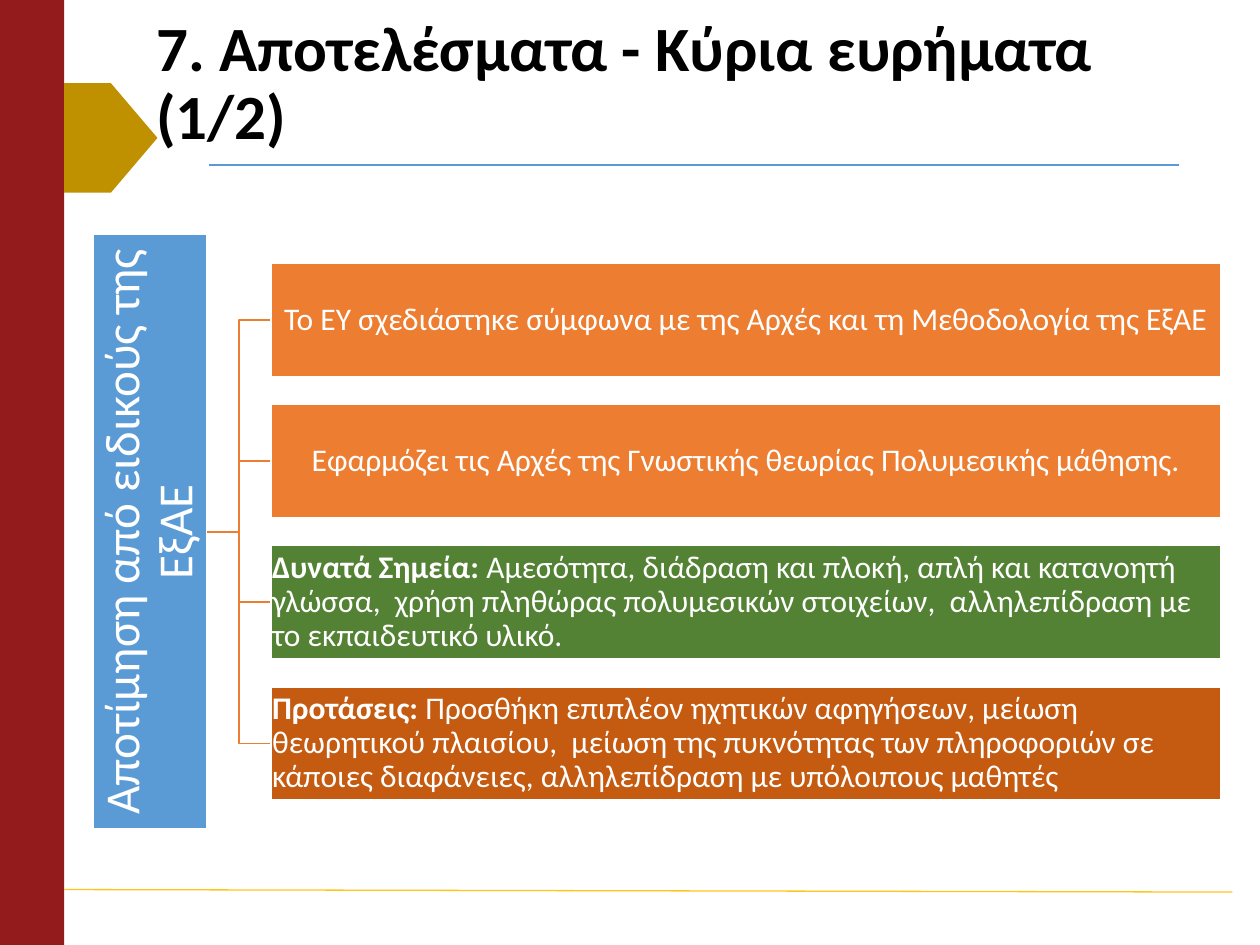
from dataclasses import dataclass

from lxml.etree import SubElement
from pptx import Presentation
from pptx.dml.color import RGBColor as Rgb
from pptx.enum.shapes import MSO_CONNECTOR as Connector, MSO_SHAPE as Preset
from pptx.enum.text import MSO_ANCHOR as Anchor, MSO_AUTO_SIZE as AutoSize, PP_ALIGN as Align
from pptx.oxml.ns import qn
from pptx.util import Inches, Pt


@dataclass(frozen=True)
class Theme:
    """Colours, font and type sizes of the slide."""
    font: str = "Calibri"
    title_size: int = 36
    root_size: int = 28
    branch_size: int = 18
    black: str = "000000"
    white: str = "FFFFFF"
    blue: str = "5B9BD5"
    orange: str = "ED7D31"
    green: str = "548235"
    rust: str = "C55A11"
    red: str = "931B1B"
    ochre: str = "BF9000"
    yellow: str = "FFC61A"


@dataclass(frozen=True)
class Grid:
    """Columns and rows of the tree, in inches."""
    root_left: float = 0.74
    branch_left: float = 2.15
    branch_width: float = 7.54
    first_top: float = 2.09
    box_height: float = 0.9
    row_pitch: float = 1.12
    root_length: float = 4.72

    def row_top(self, row):
        """Return the top of a branch row."""
        return self.first_top + row * self.row_pitch

    def row_middle(self, row):
        """Return the vertical middle of a branch row."""
        return self.row_top(row) + self.box_height / 2


THEME = Theme()
GRID = Grid()
ROOT = "Αποτίμηση από ειδικούς της ΕξΑΕ"
BRANCHES = [
    ("", "Το ΕΥ σχεδιάστηκε σύμφωνα με της Αρχές και τη Μεθοδολογία της ΕξΑΕ",
     THEME.orange, Align.CENTER),
    ("", "Εφαρμόζει τις Αρχές της Γνωστικής θεωρίας Πολυμεσικής μάθησης.",
     THEME.orange, Align.CENTER),
    ("Δυνατά Σημεία: ",
     "Αμεσότητα, διάδραση και πλοκή, απλή και κατανοητή γλώσσα,  χρήση πληθώρας "
     "πολυμεσικών στοιχείων,  αλληλεπίδραση με το εκπαιδευτικό υλικό.",
     THEME.green, Align.LEFT),
    ("Προτάσεις: ",
     "Προσθήκη επιπλέον ηχητικών αφηγήσεων, μείωση θεωρητικού πλαισίου,  μείωση της "
     "πυκνότητας των πληροφοριών σε κάποιες διαφάνειες, αλληλεπίδραση με υπόλοιπους μαθητές",
     THEME.rust, Align.LEFT),
]


def style_paragraph(paragraph, size, color, align):
    """Set the font, spacing and alignment of a paragraph."""
    paragraph.alignment = align
    paragraph.line_spacing = 0.9
    paragraph.font.name = THEME.font
    paragraph.font.size = Pt(size)
    paragraph.font.color.rgb = Rgb.from_string(color)


def add_block(slide, preset, left, top, width, height, fill, outline=None):
    """Add a filled preset shape with an optional outline."""
    block = slide.shapes.add_shape(preset, *map(Inches, (left, top, width, height)))
    block.shadow.inherit = False
    block.fill.solid()
    block.fill.fore_color.rgb = Rgb.from_string(fill)
    if outline:
        block.line.color.rgb = Rgb.from_string(outline)
        block.line.width = Pt(1)
    else:
        block.line.fill.background()
    return block


def add_rule(slide, start, end, color):
    """Add a thin straight line."""
    rule = slide.shapes.add_connector(Connector.STRAIGHT, *map(Inches, start + end))
    rule.line.color.rgb = Rgb.from_string(color)
    rule.line.width = Pt(0.75)
    SubElement(rule._element.spPr, qn("a:effectLst"))


def add_title(slide, text):
    """Place and format the title placeholder."""
    title = slide.shapes.title
    title.left, title.top, title.width, title.height = map(Inches, (1.14, 0.36, 8.5, 0.63))
    frame = title.text_frame
    frame.text = text
    frame.word_wrap = True
    frame.auto_size = AutoSize.NONE
    frame.vertical_anchor = Anchor.MIDDLE
    style_paragraph(frame.paragraphs[0], THEME.title_size, THEME.black, Align.LEFT)
    frame.paragraphs[0].font.bold = True


def write_label(block, lead, text, size, align, inset):
    """Write a label, with an optional bold lead, into a block."""
    frame = block.text_frame
    frame.word_wrap = True
    frame.vertical_anchor = Anchor.MIDDLE
    frame.margin_left = frame.margin_right = Inches(inset)
    frame.margin_top = frame.margin_bottom = Inches(inset)
    paragraph = frame.paragraphs[0]
    style_paragraph(paragraph, size, THEME.white, align)
    if lead:
        lead_run = paragraph.add_run()
        lead_run.text = lead
        lead_run.font.bold = True
    paragraph.add_run().text = text


def add_elbow(slide, start_y, end_y):
    """Add an elbow from the root to a branch."""
    start_x, end_x = GRID.root_left + GRID.box_height, GRID.branch_left
    middle_x = (start_x + end_x) / 2
    corners = [(middle_x, start_y), (middle_x, end_y), (end_x, end_y)]
    builder = slide.shapes.build_freeform(Inches(start_x), Inches(start_y))
    builder.add_line_segments([(Inches(x), Inches(y)) for x, y in corners], close=False)
    elbow = builder.convert_to_shape()
    elbow.shadow.inherit = False
    elbow.fill.background()
    elbow.line.color.rgb = Rgb.from_string(THEME.orange)
    elbow.line.width = Pt(1)


def add_tree(slide):
    """Add the root, its branches and the elbows between them."""
    middle = GRID.row_middle((len(BRANCHES) - 1) / 2)
    for row in range(len(BRANCHES)):
        add_elbow(slide, middle, GRID.row_middle(row))
    root = add_block(slide, Preset.RECTANGLE,
                     GRID.root_left + (GRID.box_height - GRID.root_length) / 2,
                     middle - GRID.box_height / 2, GRID.root_length, GRID.box_height,
                     THEME.blue, THEME.white)
    root.rotation = 270
    write_label(root, "", ROOT, THEME.root_size, Align.CENTER, 0.02)
    for row, (lead, text, fill, align) in enumerate(BRANCHES):
        branch = add_block(slide, Preset.RECTANGLE, GRID.branch_left, GRID.row_top(row),
                           GRID.branch_width, GRID.box_height, fill, THEME.white)
        write_label(branch, lead, text, THEME.branch_size, align, 0.01)


def main():
    """Build the slide and save it."""
    deck = Presentation()
    deck.slide_width, deck.slide_height = Inches(10), Inches(7.5)
    slide = deck.slides.add_slide(deck.slide_layouts[5])
    add_block(slide, Preset.RECTANGLE, 0, 0, 0.51, 7.5, THEME.red)
    add_rule(slide, (1.66, 1.31), (9.36, 1.31), THEME.blue)
    add_rule(slide, (0.51, 7.06), (9.78, 7.08), THEME.yellow)
    add_block(slide, Preset.PENTAGON, 0.51, 0.66, 0.74, 0.87, THEME.ochre)
    add_title(slide, "7. Αποτελέσματα - Κύρια ευρήματα (1/2)")
    add_tree(slide)
    deck.save("out.pptx")


if __name__ == "__main__":
    main()
